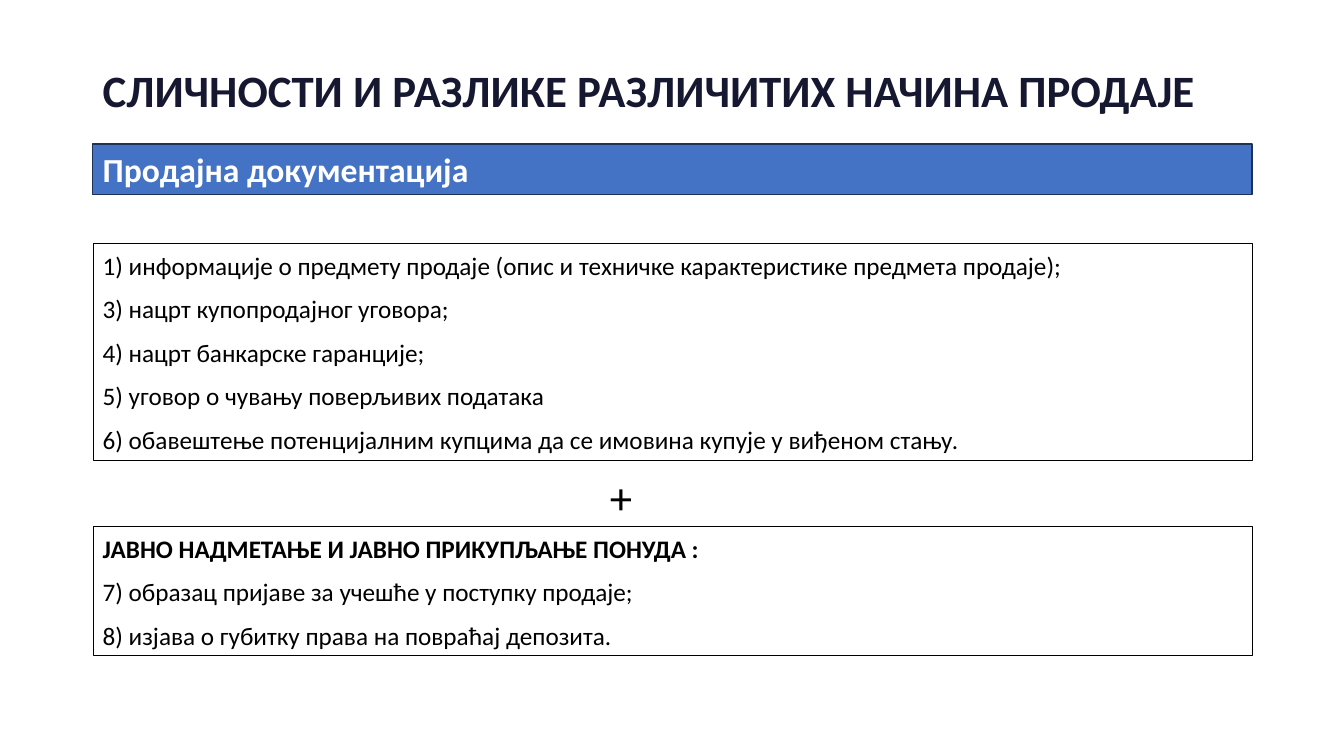
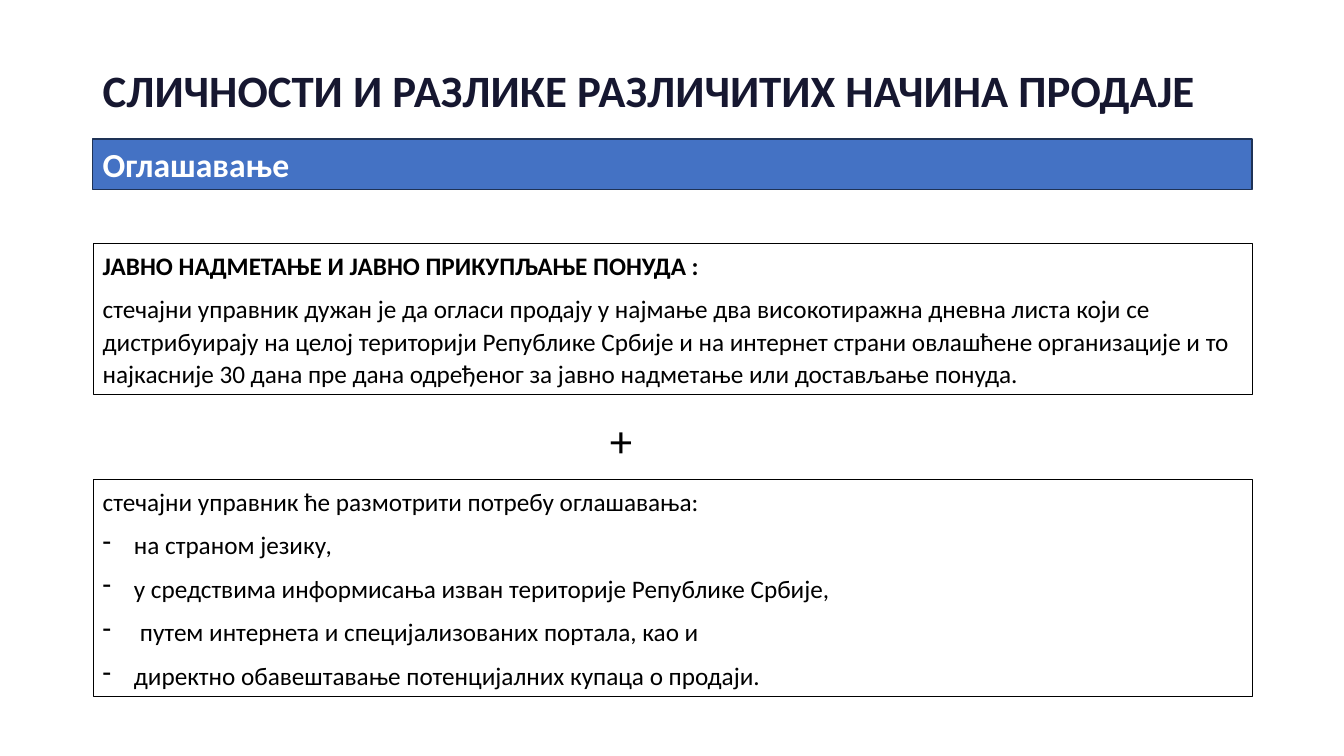
from lxml import etree
from pptx import Presentation, util as u
from pptx.dml.color import RGBColor
from pptx.enum import shapes, text
from pptx.oxml.ns import qn

COLORS = {"title": "161730", "band": "4472C4", "edge": "1E3256",
          "ink": "000000", "white": "FFFFFF"}
FONT = "Calibri"
LEFT, WIDTH = 0.92, 11.5
TITLE = "СЛИЧНОСТИ И РАЗЛИКЕ РАЗЛИЧИТИХ НАЧИНА ПРОДАЈЕ"
METHODS = {"text": "ЈАВНО НАДМЕТАЊЕ И ЈАВНО ПРИКУПЉАЊЕ ПОНУДА :", "bold": True}
DASH, WIDE_DASH = 0.31, 0.37

SLIDES = [
    {"band": ("Продајна документација", 1.43), "plus": 4.57, "boxes": [
        (2.41, 2.16, [
            "1) информације о предмету продаје (опис и техничке карактеристике предмета продаје);",
            "3) нацрт купопродајног уговора;",
            "4) нацрт банкарске гаранције;",
            "5) уговор о чувању поверљивих података",
            "6) обавештење потенцијалним купцима да се имовина купује у виђеном стању."]),
        (5.22, 1.28, [
            METHODS,
            "7) образац пријаве за учешће у поступку продаје;",
            "8) изјава о губитку права на повраћај депозита."])]},
    {"band": ("Оглашавање", 1.38), "plus": 4.01, "boxes": [
        (2.41, 1.5, [
            METHODS,
            "стечајни управник дужан је да огласи продају у најмање два високотиражна дневна листа "
            "који се дистрибуирају на целој територији Републике Србије и на интернет страни "
            "овлашћене организације и то најкасније 30 дана пре дана одређеног за јавно надметање "
            "или достављање понуда."]),
        (4.75, 2.16, [
            "стечајни управник ће размотрити потребу оглашавања:",
            {"text": "на страном језику,", "indent": DASH},
            {"text": "у средствима информисања изван територије Републике Србије,", "indent": DASH},
            {"text": "путем интернета и специјализованих портала, као и", "indent": WIDE_DASH},
            {"text": "директно обавештавање потенцијалних купаца о продаји.", "indent": DASH}])]},
]


def rgb(name):
    return RGBColor.from_string(COLORS[name])


def add_dash(p, indent):
    pPr = p._p.get_or_add_pPr()
    pPr.set("marL", str(u.Inches(indent)))
    pPr.set("indent", str(-u.Inches(indent)))
    etree.SubElement(pPr, qn("a:buFontTx"))
    etree.SubElement(pPr, qn("a:buChar")).set("char", "-")


def write(sp, items, size=18, color="ink", bold=False, spacing=1.07, after=8,
          anchor=text.MSO_ANCHOR.TOP, wrap=True):
    tf = sp.text_frame
    tf.word_wrap = wrap
    tf.vertical_anchor = anchor
    tf.auto_size = text.MSO_AUTO_SIZE.SHAPE_TO_FIT_TEXT
    for i, item in enumerate(items):
        item = {"text": item} if isinstance(item, str) else item
        p = tf.add_paragraph() if i else tf.paragraphs[0]
        p.alignment = text.PP_ALIGN.LEFT
        p.line_spacing = spacing
        p.space_after = u.Pt(after)
        if "indent" in item:
            add_dash(p, item["indent"])
        r = p.add_run()
        r.text = item["text"]
        r.font.name, r.font.size = FONT, u.Pt(size)
        r.font.bold = item.get("bold", bold)
        r.font.color.rgb = rgb(color)


def add_label(s, top, height, items, left=LEFT, width=WIDTH, **fmt):
    sp = s.shapes.add_textbox(*map(u.Inches, (left, top, width, height)))
    write(sp, items, **fmt)


def add_box(s, top, height, items, fill=None, line="ink", weight=0.25, **fmt):
    sp = s.shapes.add_shape(shapes.MSO_SHAPE.RECTANGLE,
                            *map(u.Inches, (LEFT, top, WIDTH, height)))
    sp.shadow.inherit = False
    if fill:
        sp.fill.solid()
        sp.fill.fore_color.rgb = rgb(fill)
    else:
        sp.fill.background()
    sp.line.color.rgb = rgb(line)
    sp.line.width = u.Pt(weight)
    write(sp, items, **fmt)


def add_slide(prs, content):
    s = prs.slides.add_slide(prs.slide_layouts[6])
    add_label(s, 0.62, 0.59, [TITLE], size=32, color="title", bold=True,
              spacing=0.9, after=0, anchor=text.MSO_ANCHOR.BOTTOM)
    heading, top = content["band"]
    add_box(s, top, 0.5, [heading], fill="band", line="edge", weight=1,
            size=24, color="white", bold=True, spacing=1.0, after=0)
    for top, height, items in content["boxes"]:
        add_box(s, top, height, items)
    add_label(s, content["plus"], 0.65, ["+"], left=5.95, width=0.37, size=32, wrap=False)


def main():
    prs = Presentation()
    prs.slide_width, prs.slide_height = u.Inches(13.33), u.Inches(7.5)
    for content in SLIDES:
        add_slide(prs, content)
    prs.save("out.pptx")


if __name__ == "__main__":
    main()
